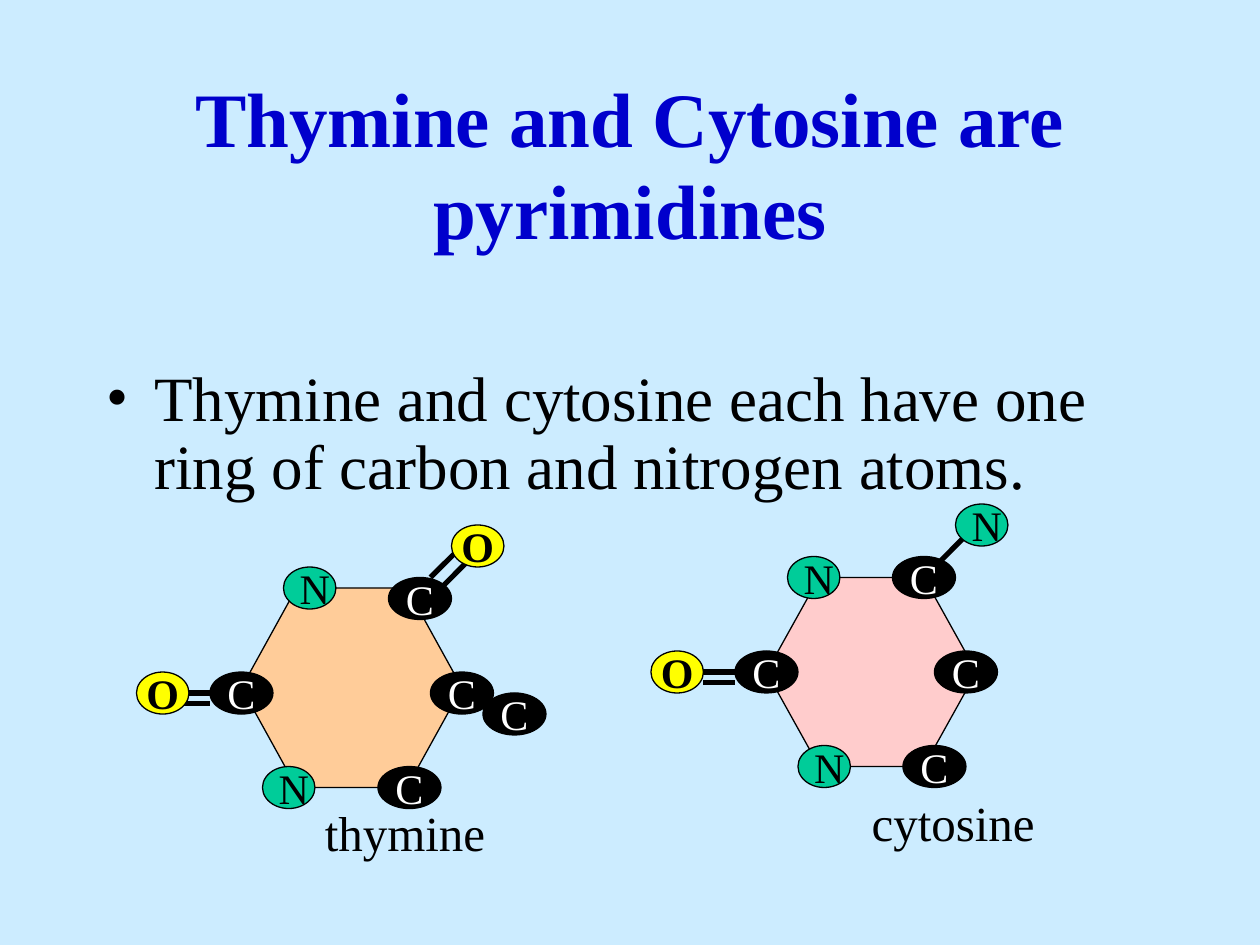
import dataclasses
import lxml.etree
import pptx
import pptx.dml.color
import pptx.enum.shapes
import pptx.enum.text
import pptx.oxml.ns
import pptx.util

SHAPE = pptx.enum.shapes.MSO_SHAPE
ALIGN = pptx.enum.text.PP_ALIGN
ANCHOR = pptx.enum.text.MSO_ANCHOR


@dataclasses.dataclass(frozen=True)
class Theme:
    font: str = "Times New Roman"
    back: str = "CCECFF"
    title: str = "0000CC"
    ink: str = "000000"
    white: str = "FFFFFF"
    green: str = "00CC99"
    yellow: str = "FFFF00"
    peach: str = "FFCC99"
    pink: str = "FFCCCC"
    head: int = 44
    body: int = 36
    label: int = 28
    atom: int = 24
    thin: float = 0.75
    bond: float = 3


THEME = Theme()
STEP = 2.54 / 12

ATOMS = {
    "C": ("C", 6, THEME.ink, THEME.white, False),
    "N": (" N", 5, THEME.green, THEME.ink, False),
    "O": ("O", 5, THEME.yellow, THEME.ink, True),
}

THYMINE = {
    "name": "thymine",
    "fill": THEME.peach,
    "ring": (10, 6, 21, 19, 0.276),
    "bonds": [(29, 6, 33, 2), (28, 5, 32, 1), (7, 16, 4, 16), (7, 17, 4, 17)],
    "atoms": {
        "C": [(24, 5), (28, 14), (23, 23), (7, 14), (33, 16)],
        "N": [(14, 4), (12, 23)],
        "O": [(0, 14), (30, 0)],
    },
    "label": (16.76, 25.84),
}

CYTOSINE = {
    "name": "cytosine",
    "fill": THEME.pink,
    "ring": (11, 7, 20, 18, 0.278),
    "bonds": [(27, 6, 32, 1), (8, 16, 5, 16), (8, 17, 5, 17)],
    "atoms": {
        "C": [(23, 5), (27, 14), (24, 23), (8, 14)],
        "N": [(14, 23), (13, 5), (29, 0)],
        "O": [(0, 14)],
    },
    "label": (19.84, 26.88),
}


def grid(*nums):
    return [pptx.util.Cm(num * STEP) for num in nums]


def color(code):
    return pptx.dml.color.RGBColor.from_string(code)


def write(para, text, size, ink, bold=False):
    run = para.add_run()
    run.text = text
    run.font.name = THEME.font
    run.font.size = pptx.util.Pt(size)
    run.font.bold = bold
    run.font.color.rgb = color(ink)


def paint(shape, fill):
    shape.shadow.inherit = False
    shape.fill.solid()
    shape.fill.fore_color.rgb = color(fill)
    shape.line.color.rgb = color(THEME.ink)
    shape.line.width = pptx.util.Pt(THEME.thin)


def add_title(slide, box):
    title = slide.shapes.title
    title.left, title.top, title.width, title.height = box
    frame = title.text_frame
    frame.word_wrap = True
    frame.vertical_anchor = ANCHOR.MIDDLE
    para = frame.paragraphs[0]
    para.alignment = ALIGN.CENTER
    write(para, "Thymine and Cytosine are pyrimidines", THEME.head, THEME.title, True)


def add_body(slide, box):
    frame = slide.shapes.add_textbox(*box).text_frame
    frame.word_wrap = True
    para = frame.paragraphs[0]
    props = para._p.get_or_add_pPr()
    dent = pptx.util.Cm(0.96)
    props.set("marL", str(dent))
    props.set("indent", str(-dent))
    face = lxml.etree.SubElement(props, pptx.oxml.ns.qn("a:buFont"))
    face.set("typeface", THEME.font)
    mark = lxml.etree.SubElement(props, pptx.oxml.ns.qn("a:buChar"))
    mark.set("char", "•")
    para.font.size = pptx.util.Pt(THEME.body)
    para.line_spacing = 0.9
    write(
        para,
        "Thymine and cytosine each have one ring of carbon and nitrogen atoms.",
        THEME.body,
        THEME.ink,
    )


def add_bond(group, ends):
    bond = group.shapes.add_connector(
        pptx.enum.shapes.MSO_CONNECTOR.STRAIGHT, *grid(*ends)
    )
    bond.line.color.rgb = color(THEME.ink)
    bond.line.width = pptx.util.Pt(THEME.bond)
    lxml.etree.SubElement(bond._element.spPr, pptx.oxml.ns.qn("a:effectLst"))


def add_atom(group, kind, x, y):
    text, width, fill, ink, bold = ATOMS[kind]
    atom = group.shapes.add_shape(SHAPE.OVAL, *grid(x, y, width, 4))
    paint(atom, fill)
    frame = atom.text_frame
    frame.word_wrap = False
    frame.vertical_anchor = ANCHOR.MIDDLE
    para = frame.paragraphs[0]
    para.alignment = ALIGN.CENTER
    write(para, text, THEME.atom, ink, bold)


def add_base(slide, left, top, base):
    group = slide.shapes.add_group_shape()
    x, y, width, height, slant = base["ring"]
    ring = group.shapes.add_shape(
        SHAPE.HEXAGON, *grid(left + x, top + y, width, height)
    )
    ring.adjustments[0] = slant
    paint(ring, base["fill"])
    for x1, y1, x2, y2 in base["bonds"]:
        add_bond(group, (left + x1, top + y1, left + x2, top + y2))
    for kind, spots in base["atoms"].items():
        for x, y in spots:
            add_atom(group, kind, left + x, top + y)
    x, y = base["label"]
    label = group.shapes.add_textbox(*grid(left + x, top + y, 19, 6.84))
    frame = label.text_frame
    frame.word_wrap = True
    write(frame.paragraphs[0], base["name"], THEME.label, THEME.ink)


def main():
    deck = pptx.Presentation()
    deck.slide_width, deck.slide_height = grid(120, 90)
    slide = deck.slides.add_slide(deck.slide_layouts[5])
    slide.background.fill.solid()
    slide.background.fill.fore_color.rgb = color(THEME.back)
    add_title(slide, grid(9, 8, 102, 15))
    add_body(slide, grid(9, 34.36, 102, 13.5))
    add_base(slide, 62, 48, CYTOSINE)
    add_base(slide, 13, 50, THYMINE)
    deck.save("out.pptx")


if __name__ == "__main__":
    main()
